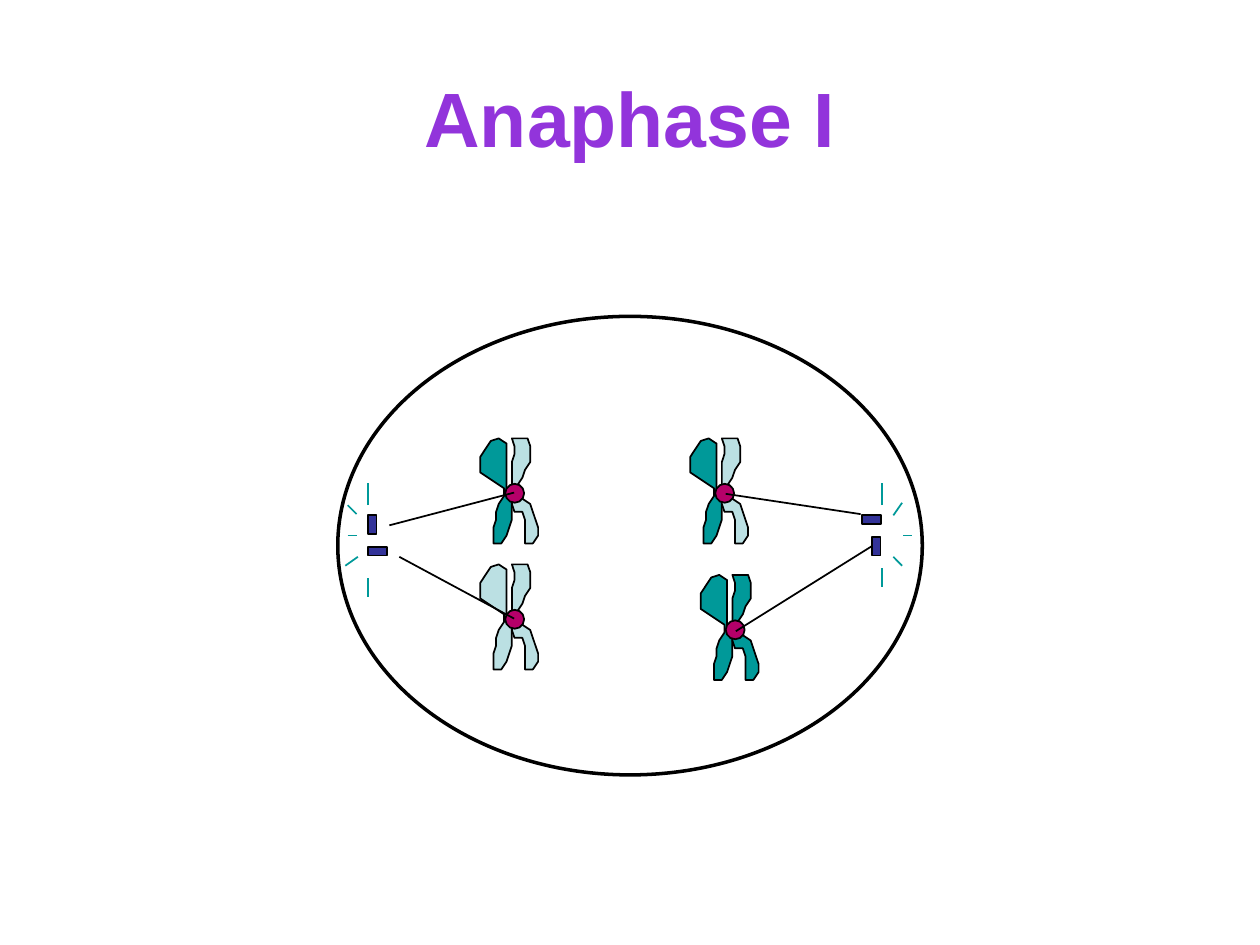
from lxml import etree
from pptx import Presentation
from pptx.dml.color import RGBColor
from pptx.enum import shapes, text
from pptx.oxml import ns
from pptx.util import Pt

BLACK, WHITE = "000000", "FFFFFF"
TEAL, PALE = "009999", "BBE0E3"
PURPLE, MAGENTA, NAVY = "9234DB", "B50069", "333399"

# Chromatid outlines, in grid steps from the chromosome's top left corner
GRID = 1.5
LEFT_CHROMATID = [
    (13, 21), (10, 20), (10, 2), (7, 0), (4, 1), (2, 4), (0, 7), (0, 13),
    (9, 19), (9, 22), (7, 25), (6, 28), (6, 31), (5, 34), (5, 40), (8, 40),
    (10, 37), (11, 34), (12, 31), (12, 22)]
RIGHT_CHROMATID = [
    (13, 21), (12, 18), (12, 9), (13, 6), (13, 3), (12, 0), (18, 0), (19, 3),
    (19, 9), (17, 12), (16, 15), (14, 18), (13, 21), (19, 25), (22, 34),
    (22, 37), (20, 40), (17, 40), (17, 31), (16, 28), (13, 28), (12, 25),
    (12, 22)]

# left, top, left chromatid colour, right chromatid colour
CHROMOSOMES = [
    (274.5, 322.5, PALE, PALE),
    (394.5, 250.5, TEAL, PALE),
    (274.5, 250.5, TEAL, PALE),
    (400.5, 328.5, TEAL, TEAL)]

ASTER_RAYS = [
    (204.5, 318.2, 197.3, 323.3),
    (198.7, 306, 203.8, 306),
    (198.7, 288.7, 203.8, 293.8),
    (210.2, 288.7, 210.2, 275.8),
    (210.2, 330.5, 210.2, 341.3),
    (504, 288.7, 504, 275.8),
    (510.5, 294.5, 515.5, 287.3),
    (516.2, 306, 521.3, 306),
    (510.5, 318.2, 515.5, 323.3),
    (504, 324.7, 504, 335.5)]

SPINDLE_FIBRES = [
    (222.5, 300.2, 293.8, 281.5),
    (228.2, 318.2, 293.8, 353.5),
    (414.7, 282.2, 491.8, 293.8)]


def colour(hex_string):
    return RGBColor.from_string(hex_string)


class CellDiagram:
    """The current slide and the style its elements share."""
    font = "Arial"
    thin = 1

    def __init__(self, slide):
        self.shapes = slide.shapes

    def title(self, wording, left, top, width, height):
        box = self.shapes.add_textbox(Pt(left), Pt(top), Pt(width), Pt(height))
        frame = box.text_frame
        frame.word_wrap = True
        frame.vertical_anchor = text.MSO_ANCHOR.MIDDLE
        paragraph = frame.paragraphs[0]
        paragraph.alignment = text.PP_ALIGN.CENTER
        run = paragraph.add_run()
        run.text = wording
        run.font.name = self.font
        run.font.size = Pt(44)
        run.font.bold = True
        run.font.color.rgb = colour(PURPLE)

    def paint(self, shape, fill, weight=thin):
        shape.shadow.inherit = False
        shape.fill.solid()
        shape.fill.fore_color.rgb = colour(fill)
        shape.line.color.rgb = colour(BLACK)
        shape.line.width = Pt(weight)
        return shape

    def oval(self, left, top, width, height, fill, weight=thin):
        return self.paint(self.shapes.add_shape(
            shapes.MSO_SHAPE.OVAL, Pt(left), Pt(top), Pt(width), Pt(height)),
            fill, weight)

    def centriole(self, left, top, upright):
        width, height = (5, 10.8) if upright else (10.8, 5)
        return self.paint(self.shapes.add_shape(
            shapes.MSO_SHAPE.RECTANGLE,
            Pt(left), Pt(top), Pt(width), Pt(height)), NAVY)

    def chromatid(self, left, top, outline, fill):
        builder = self.shapes.build_freeform(*outline[0], scale=Pt(GRID))
        builder.add_line_segments(outline[1:], close=True)
        self.paint(builder.convert_to_shape(Pt(left), Pt(top)), fill)

    def chromosome(self, left, top, left_fill, right_fill):
        self.chromatid(left, top, LEFT_CHROMATID, left_fill)
        self.chromatid(left, top, RIGHT_CHROMATID, right_fill)
        self.oval(left + 14.2, top + 26, 10.8, 10.8, MAGENTA)

    def line(self, x1, y1, x2, y2, stroke):
        connector = self.shapes.add_connector(
            shapes.MSO_CONNECTOR.STRAIGHT, Pt(x1), Pt(y1), Pt(x2), Pt(y2))
        connector.line.color.rgb = colour(stroke)
        connector.line.width = Pt(self.thin)
        etree.SubElement(connector._element.spPr, ns.qn("a:effectLst"))
        return connector


def main():
    deck = Presentation()
    deck.slide_width, deck.slide_height = Pt(720), Pt(540)
    diagram = CellDiagram(deck.slides.add_slide(deck.slide_layouts[6]))

    diagram.title("Anaphase I", 36, 21.6, 648, 90)
    diagram.oval(193, 180.8, 334, 262, WHITE, weight=2)

    lower_right_centriole = diagram.centriole(498.2, 306.7, upright=True)
    diagram.centriole(210.2, 294.5, upright=True)
    diagram.centriole(492.5, 294.5, upright=False)
    diagram.centriole(210.2, 312.5, upright=False)

    for chromosome in CHROMOSOMES:
        diagram.chromosome(*chromosome)
    for ray in ASTER_RAYS:
        diagram.line(*ray, TEAL)
    for fibre in SPINDLE_FIBRES:
        diagram.line(*fibre, BLACK)
    joined_fibre = diagram.line(420.5, 360.7, 498.2, 312.1, BLACK)
    joined_fibre.end_connect(lower_right_centriole, 1)

    deck.save("out.pptx")


if __name__ == "__main__":
    main()
